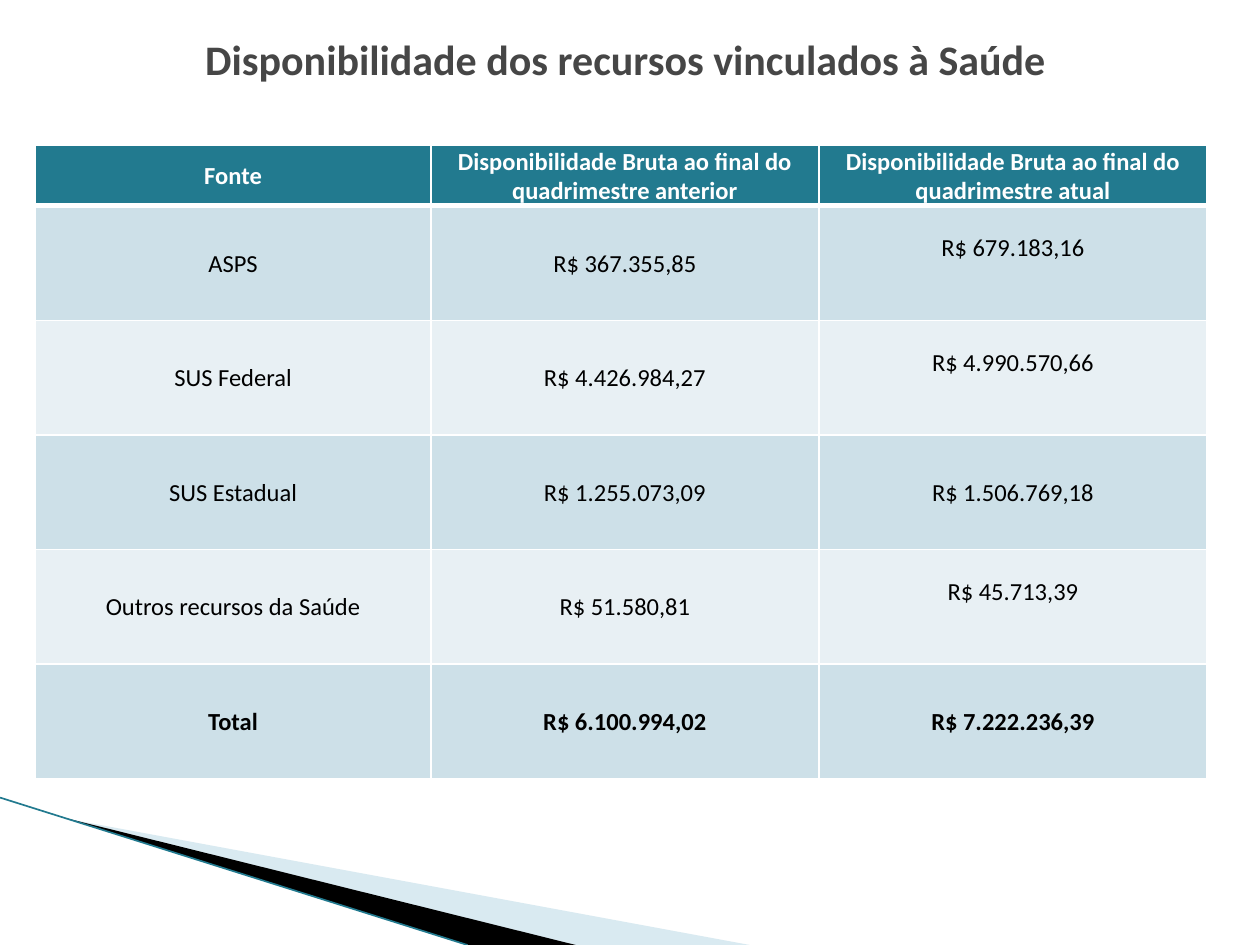
from dataclasses import dataclass

import lxml.etree
import pptx
import pptx.dml.color
import pptx.enum.shapes
import pptx.enum.text
import pptx.oxml.ns
import pptx.util

RGBColor = pptx.dml.color.RGBColor
WHITE = RGBColor(0xFF, 0xFF, 0xFF)
BLACK = RGBColor(0x00, 0x00, 0x00)
TITLE_GREY = RGBColor(0x46, 0x46, 0x46)
TEAL = RGBColor(0x22, 0x7A, 0x8F)
PALE_BLUE = RGBColor(0xA0, 0xCB, 0xDC)
BANDS = (RGBColor(0xCD, 0xE0, 0xE8), RGBColor(0xE8, 0xF0, 0xF4))

WIDTH, HEIGHT = 10, 7.5
FONT = "Calibri"
COLUMN_WIDTHS = (3.14, 3.08, 3.08)
HEADER_HEIGHT, ROW_HEIGHT = 0.47, 0.91
RAISED_MARGIN = 0.24  # one text line kept free below the amount


@dataclass
class FundRow:
    source: str
    previous: str
    current: str
    raised: bool = False
    bold: bool = False


@dataclass
class Wedge:
    points: tuple[tuple[float, float], ...]  # shares of slide width and height
    colour: RGBColor
    opacity: int = 100


HEADER = FundRow(
    "Fonte",
    "Disponibilidade Bruta ao final do quadrimestre anterior",
    "Disponibilidade Bruta ao final do quadrimestre atual",
    bold=True,
)
FUNDS = (
    FundRow("ASPS", "R$ 367.355,85", "R$ 679.183,16", raised=True),
    FundRow("SUS Federal", "R$ 4.426.984,27", "R$ 4.990.570,66", raised=True),
    FundRow("SUS Estadual", "R$ 1.255.073,09", "R$ 1.506.769,18"),
    FundRow("Outros recursos da Saúde", "R$ 51.580,81", "R$ 45.713,39", raised=True),
    FundRow("Total", "R$ 6.100.994,02", "R$ 7.222.236,39", bold=True),
)
WEDGES = (
    Wedge(((0.055, 0.867), (0.595, 1), (0.456, 1)), PALE_BLUE, opacity=40),
    Wedge(((0.053, 0.866), (0.457, 1), (0.372, 1)), BLACK),
)


def across(share: float) -> int:
    return pptx.util.Inches(WIDTH * share)


def down(share: float) -> int:
    return pptx.util.Inches(HEIGHT * share)


def write(frame, text: str, size: int, colour: RGBColor, bold: bool) -> None:
    frame.word_wrap = True
    paragraph = frame.paragraphs[0]
    paragraph.alignment = pptx.enum.text.PP_ALIGN.CENTER
    run = paragraph.add_run()
    run.text = text
    run.font.name = FONT
    run.font.size = pptx.util.Pt(size)
    run.font.bold = bold
    run.font.color.rgb = colour


def add_solid_fill(parent, colour: RGBColor) -> None:
    fill = lxml.etree.SubElement(parent, pptx.oxml.ns.qn("a:solidFill"))
    lxml.etree.SubElement(fill, pptx.oxml.ns.qn("a:srgbClr"), val=str(colour))


def draw_wedge(slide, wedge: Wedge) -> None:
    corners = [(across(x), down(y)) for x, y in wedge.points]
    builder = slide.shapes.build_freeform(*corners[0])
    builder.add_line_segments(corners[1:], close=True)
    shape = builder.convert_to_shape()
    shape.shadow.inherit = False
    shape.line.fill.background()
    shape.fill.solid()
    shape.fill.fore_color.rgb = wedge.colour
    if wedge.opacity < 100:
        colour = shape.fill._xPr.find(".//" + pptx.oxml.ns.qn("a:srgbClr"))
        lxml.etree.SubElement(
            colour, pptx.oxml.ns.qn("a:alpha"), val=str(wedge.opacity * 1000)
        )


def draw_edge(slide) -> None:
    edge = slide.shapes.add_connector(
        pptx.enum.shapes.MSO_CONNECTOR.STRAIGHT,
        across(0), down(0.844), across(0.371), down(1),
    )
    edge.line.color.rgb = TEAL
    edge.line.width = pptx.util.Pt(0.95)
    lxml.etree.SubElement(
        edge._element.spPr, pptx.oxml.ns.qn("a:effectLst")
    )


def style_cell(cell, fill: RGBColor, bottom_border: int) -> None:
    properties = cell._tc.get_or_add_tcPr()
    borders = {"a:lnL": 1, "a:lnR": 1, "a:lnT": 1, "a:lnB": bottom_border}
    for side, points in borders.items():
        border = lxml.etree.SubElement(
            properties, pptx.oxml.ns.qn(side), w=str(pptx.util.Pt(points))
        )
        add_solid_fill(border, WHITE)
    cell.fill.solid()
    cell.fill.fore_color.rgb = fill
    cell.margin_left = cell.margin_right = pptx.util.Inches(0.01)
    cell.margin_top = pptx.util.Inches(0.01)
    cell.margin_bottom = 0
    cell.vertical_anchor = pptx.enum.text.MSO_ANCHOR.MIDDLE


def draw_funds_table(slide) -> None:
    rows = (HEADER, *FUNDS)
    table = slide.shapes.add_table(
        len(rows), len(COLUMN_WIDTHS), across(0.028), down(0.154),
        pptx.util.Inches(sum(COLUMN_WIDTHS)),
        pptx.util.Inches(HEADER_HEIGHT + ROW_HEIGHT * len(FUNDS)),
    ).table
    table.horz_banding = False
    for column, width in zip(table.columns, COLUMN_WIDTHS):
        column.width = pptx.util.Inches(width)
    for index, fund in enumerate(rows):
        is_header = index == 0
        height = HEADER_HEIGHT if is_header else ROW_HEIGHT
        table.rows[index].height = pptx.util.Inches(height)
        fill = TEAL if is_header else BANDS[(index - 1) % 2]
        texts = (fund.source, fund.previous, fund.current)
        for cell, text in zip(table.rows[index].cells, texts):
            # The border below the header and above the first row is thicker
            style_cell(cell, fill, 3 if is_header else 1)
            if index == 1:
                top = cell._tc.tcPr.find(pptx.oxml.ns.qn("a:lnT"))
                top.set("w", str(pptx.util.Pt(3)))
            write(cell.text_frame, text, 14, WHITE if is_header else BLACK, fund.bold)
        if fund.raised:
            table.cell(index, 2).margin_bottom = pptx.util.Inches(RAISED_MARGIN)


def main() -> None:
    deck = pptx.Presentation()
    deck.slide_width = pptx.util.Inches(WIDTH)
    deck.slide_height = pptx.util.Inches(HEIGHT)
    slide = deck.slides.add_slide(deck.slide_layouts[6])

    # Corner decoration
    for wedge in WEDGES:
        draw_wedge(slide, wedge)
    draw_edge(slide)

    # Title
    title = slide.shapes.add_textbox(
        across(0.016), down(-0.01), across(0.961), down(0.145)
    ).text_frame
    title.vertical_anchor = pptx.enum.text.MSO_ANCHOR.MIDDLE
    write(title, "Disponibilidade dos recursos vinculados à Saúde", 24, TITLE_GREY, True)

    # Funds by source
    draw_funds_table(slide)
    deck.save("out.pptx")


if __name__ == "__main__":
    main()
